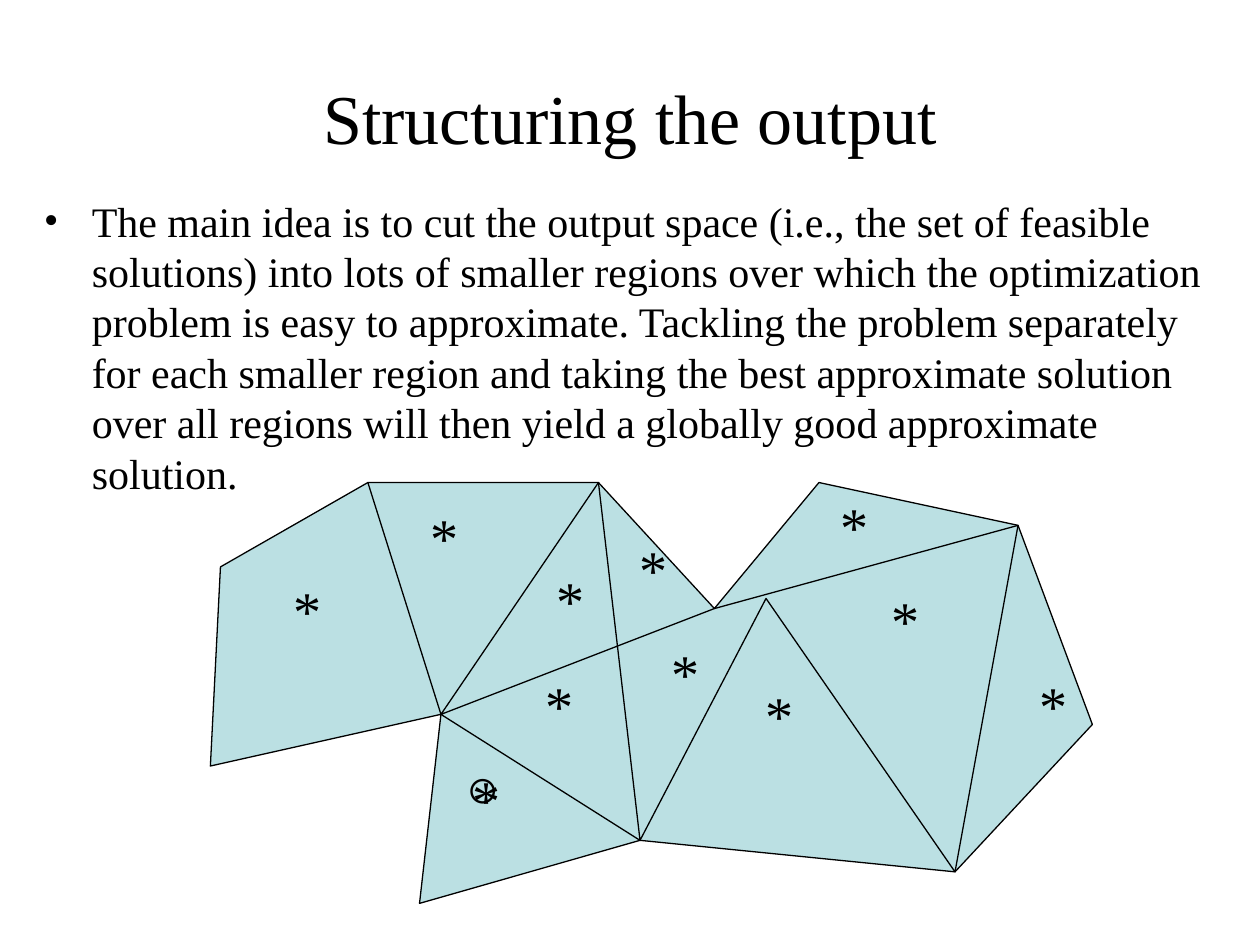
"""Build a slide on cutting the output space into smaller regions."""
from dataclasses import dataclass
from typing import Optional

from lxml import etree
from pptx import Presentation
from pptx import util as u
from pptx.dml.color import RGBColor
from pptx.enum import text as t
from pptx.oxml import ns

BLACK = RGBColor(0x00, 0x00, 0x00)
TEAL = RGBColor(0xBB, 0xE0, 0xE3)
SERIF = "Times New Roman"
IDEA = (
    "The main idea is to cut the output space (i.e., the set of feasible "
    "solutions) into lots of smaller regions over which the optimization "
    "problem is easy to approximate. Tackling the problem separately for "
    "each smaller region and taking the best approximate solution over all "
    "regions will then yield a globally good approximate solution."
)


@dataclass(frozen=True)
class Mark:
    left: float
    top: float
    sign: str = "*"
    width: float = 0.42
    font: str = SERIF
    wrap: bool = False


@dataclass(frozen=True)
class Path:
    points: tuple[tuple[float, float], ...]
    closed: bool = False
    fill: Optional[RGBColor] = None


PATHS = (
    Path(
        ((1.75, 4.5), (2.92, 3.83), (4.75, 3.83), (5.67, 4.83),
         (6.5, 3.83), (8.08, 4.17), (8.67, 5.75), (7.58, 6.92),
         (5.08, 6.67), (3.33, 7.17), (3.5, 5.67), (1.67, 6.08)),
        closed=True,
        fill=TEAL,
    ),
    Path(
        ((2.92, 3.83), (3.5, 5.67), (4.75, 3.83), (5.08, 6.67),
         (3.5, 5.67), (5.67, 4.83), (8.08, 4.17), (7.58, 6.92),
         (6.08, 4.75), (5.08, 6.67)),
    ),
)
MARKS = (
    Mark(2.23, 4.52), Mark(3.32, 3.94), Mark(4.32, 4.44),
    Mark(3.65, 6.02), Mark(4.23, 5.27), Mark(4.98, 4.19),
    Mark(6.57, 3.85), Mark(5.23, 5.02), Mark(6.98, 4.6),
    Mark(5.98, 5.35), Mark(8.15, 5.27),
    Mark(3.6, 5.92, "○", 0.33, "Arial", True),
)


def place(shape, left: float, top: float, width: float, height: float) -> None:
    """Set the position and size of a shape in inches."""
    shape.left, shape.top = u.Inches(left), u.Inches(top)
    shape.width, shape.height = u.Inches(width), u.Inches(height)


def write(para, words: str, size: float, font: str = SERIF) -> None:
    """Add one black run to a paragraph."""
    run = para.add_run()
    run.text = words
    run.font.name, run.font.size = font, u.Pt(size)
    run.font.color.rgb = BLACK


def add_title(slide) -> None:
    """Fill the title placeholder."""
    title = slide.shapes.title
    place(title, 0.5, 0.3, 9, 1.25)
    frame = title.text_frame
    frame.vertical_anchor = t.MSO_ANCHOR.MIDDLE
    para = frame.paragraphs[0]
    para.alignment = t.PP_ALIGN.CENTER
    write(para, "Structuring the output", 40)


def add_body(slide) -> None:
    """Add the bulleted paragraph."""
    box = slide.shapes.add_textbox(
        u.Inches(0.25), u.Inches(1.5), u.Inches(9.42), u.Inches(2))
    box.text_frame.word_wrap = True
    para = box.text_frame.paragraphs[0]
    para.space_before = u.Pt(4.8)
    write(para, IDEA, 24)
    props = para._p.get_or_add_pPr()
    props.set("marL", str(u.Inches(0.38)))
    props.set("indent", str(u.Inches(-0.38)))
    etree.SubElement(props, ns.qn("a:buFont"), typeface=SERIF)
    etree.SubElement(props, ns.qn("a:buChar"), char="•")


def draw_path(slide, path: Path) -> None:
    """Draw one outline with a thin black line."""
    first, *rest = [(u.Inches(x), u.Inches(y)) for x, y in path.points]
    pen = slide.shapes.build_freeform(*first)
    pen.add_line_segments(rest, close=path.closed)
    shape = pen.convert_to_shape()
    shape.shadow.inherit = False
    shape.line.color.rgb = BLACK
    shape.line.width = u.Pt(0.75)
    if path.fill is None:
        shape.fill.background()
    else:
        shape.fill.solid()
        shape.fill.fore_color.rgb = path.fill


def draw_mark(slide, mark: Mark) -> None:
    """Put one solution sign in its region."""
    box = slide.shapes.add_textbox(
        u.Inches(mark.left), u.Inches(mark.top),
        u.Inches(mark.width), u.Inches(0.63))
    frame = box.text_frame
    frame.word_wrap = mark.wrap
    frame.auto_size = t.MSO_AUTO_SIZE.SHAPE_TO_FIT_TEXT
    write(frame.paragraphs[0], mark.sign, 32, mark.font)


def main() -> None:
    """Build and save the slide."""
    deck = Presentation()
    deck.slide_width, deck.slide_height = u.Inches(10), u.Inches(7.5)
    slide = deck.slides.add_slide(deck.slide_layouts.get_by_name("Title Only"))
    add_title(slide)
    add_body(slide)
    for path in PATHS:
        draw_path(slide, path)
    for mark in MARKS:
        draw_mark(slide, mark)
    deck.save("out.pptx")


if __name__ == "__main__":
    main()
